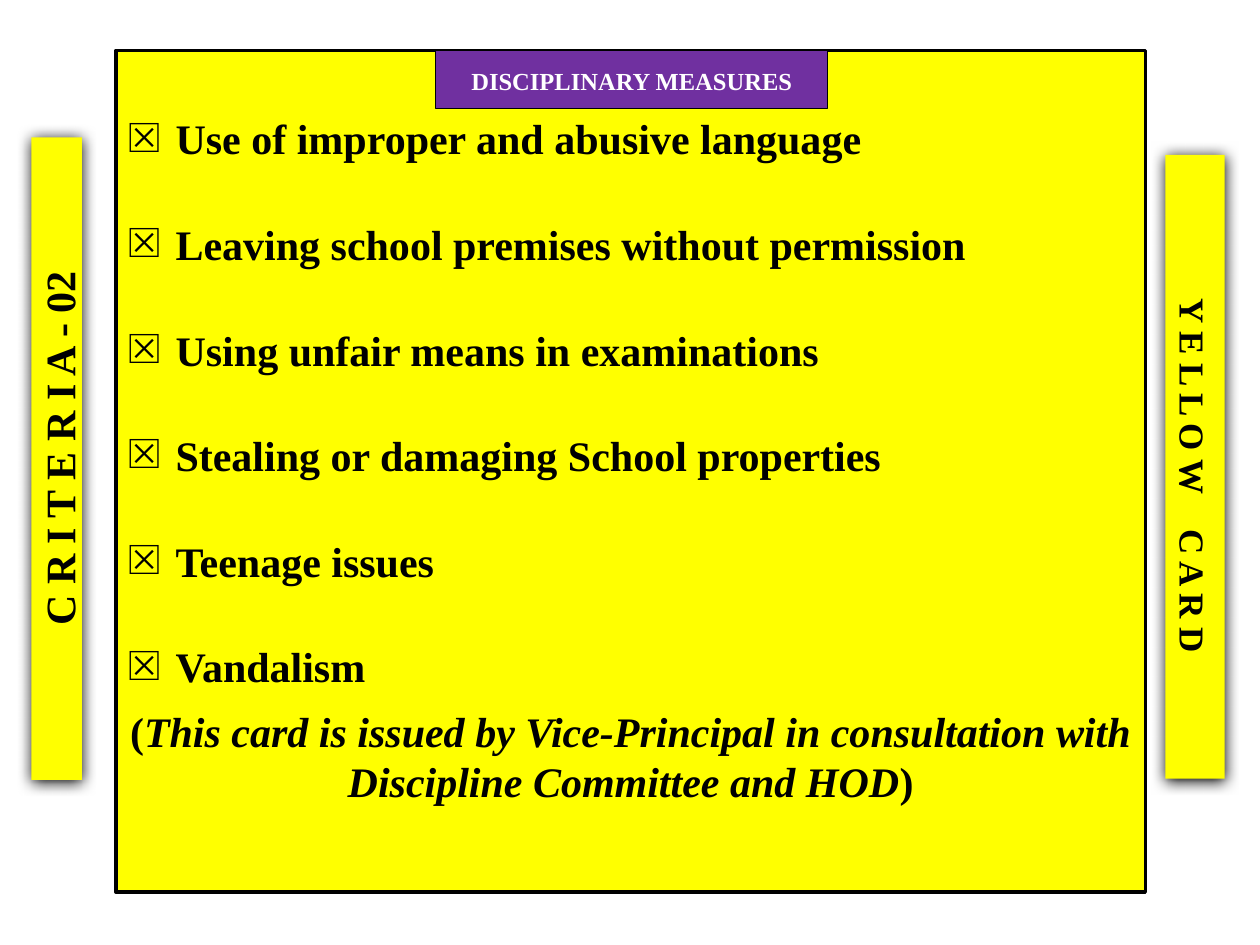
import pptx
import pptx.dml.color
import pptx.enum.shapes
import pptx.enum.text
import pptx.oxml
import pptx.oxml.ns
import pptx.util

Pt = pptx.util.Pt
ALIGN = pptx.enum.text.PP_ALIGN
ANCHOR = pptx.enum.text.MSO_ANCHOR
FONT = "Times New Roman"
COLORS = {"yellow": "FFFF00", "purple": "7030A0", "black": "000000", "white": "FFFFFF"}

TITLE = "DISCIPLINARY MEASURES"
OFFENCES = [
    "Use of improper and abusive language",
    "Leaving school premises without permission",
    "Using unfair means in examinations",
    "Stealing or damaging School properties",
    "Teenage issues",
    "Vandalism",
]
NOTE = [
    [("(", {}), ("This card is issued by Vice-Principal in consultation with", {"italic": True})],
    [("Discipline Committee and HOD", {"italic": True}), (")", {})],
]
CRITERIA = "C R I T E R I A - 02"
CARD_NAME = [("Y E L L O W", {}), (" ", {"tracking": 15}), ("C A R D", {})]

CARD_BOX = (66.24, 28.8, 588.24, 480.96)
TITLE_BOX = (249.12, 28.8, 223.92, 33.12)
CRITERIA_BOX = (18, 78.48, 28.8, 367.2)
NAME_BOX = (666, 88.56, 33.84, 356.4)
LINE_SPACING = 1.07
ITEM_GAP = 29.5
HANG = 27


def rgb(name):
    return pptx.dml.color.RGBColor.from_string(COLORS[name])


def add_box(s, box, fill, line=None):
    """Add a rectangle; line is a width in points, or None for no outline."""
    sp = s.shapes.add_shape(pptx.enum.shapes.MSO_SHAPE.RECTANGLE, *map(Pt, box))
    sp.shadow.inherit = False
    sp.fill.solid()
    sp.fill.fore_color.rgb = rgb(fill)
    if line:
        sp.line.color.rgb = rgb("black")
        sp.line.width = Pt(line)
    else:
        sp.line.fill.background()
    sp.text_frame.word_wrap = True
    return sp


def add_shadow(sp):
    effects = sp._element.spPr.find(pptx.oxml.ns.qn("a:effectLst"))
    effects.append(pptx.oxml.parse_xml(
        f'<a:outerShdw {pptx.oxml.ns.nsdecls("a")} blurRad="{Pt(8.5)}" dist="{Pt(1)}" '
        f'dir="5400000" algn="ctr" rotWithShape="0"><a:srgbClr val="{COLORS["black"]}"/>'
        '</a:outerShdw>'))


def add_bullet(p):
    pPr = p._p.get_or_add_pPr()
    pPr.set("marL", str(Pt(HANG)))
    pPr.set("indent", str(-Pt(HANG)))
    ns = pptx.oxml.ns.nsdecls("a")
    pPr.append(pptx.oxml.parse_xml(f'<a:buFont {ns} typeface="{FONT}"/>'))
    pPr.append(pptx.oxml.parse_xml(f'<a:buChar {ns} char="☒"/>'))


def add_text(tf, text, size=24, color="black", align=ALIGN.CENTER, before=0, after=0,
             bullet=False, spacing=LINE_SPACING):
    """Write one paragraph; text is a string or a list of (string, run format)."""
    p = tf.paragraphs[0]
    if p.runs:
        p = tf.add_paragraph()
    if bullet:
        add_bullet(p)
    p.alignment = align
    p.line_spacing = spacing
    p.space_before, p.space_after = Pt(before), Pt(after)
    for words, style in [(text, {})] if isinstance(text, str) else text:
        r = p.add_run()
        r.text = words
        r.font.name, r.font.size, r.font.bold = FONT, Pt(size), True
        r.font.italic = style.get("italic", False)
        r.font.color.rgb = rgb(color)
        if "tracking" in style:
            r._r.get_or_add_rPr().set("spc", str(style["tracking"] * 100))


def add_side_label(s, box, text, size, direction, top=3.6, bottom=3.6):
    sp = add_box(s, box, "yellow")
    add_shadow(sp)
    tf = sp.text_frame
    tf.vertical_anchor = ANCHOR.MIDDLE
    tf.margin_top, tf.margin_bottom = Pt(top), Pt(bottom)
    tf._txBody.bodyPr.set("vert", direction)
    add_text(tf, text, size=size, after=8)


def main():
    prs = pptx.Presentation()
    prs.slide_width, prs.slide_height = Pt(720), Pt(540)
    s = prs.slides.add_slide(prs.slide_layouts[6])

    tf = add_box(s, CARD_BOX, "yellow", line=2).text_frame
    tf.vertical_anchor = ANCHOR.TOP
    tf.margin_top = Pt(33.7)
    for i, offence in enumerate(OFFENCES):
        add_text(tf, offence, align=ALIGN.LEFT, bullet=True, before=ITEM_GAP if i else 0,
                 after=8 if i == len(OFFENCES) - 1 else 0)
    for line in NOTE:
        add_text(tf, line, spacing=1.0)

    add_side_label(s, CRITERIA_BOX, CRITERIA, 24, "vert270", bottom=18.6)
    add_side_label(s, NAME_BOX, CARD_NAME, 20, "vert", top=17.3)

    tf = add_box(s, TITLE_BOX, "purple", line=0.5).text_frame
    tf.vertical_anchor = ANCHOR.MIDDLE
    add_text(tf, TITLE, size=14, color="white")
    prs.save("out.pptx")


if __name__ == "__main__":
    main()
